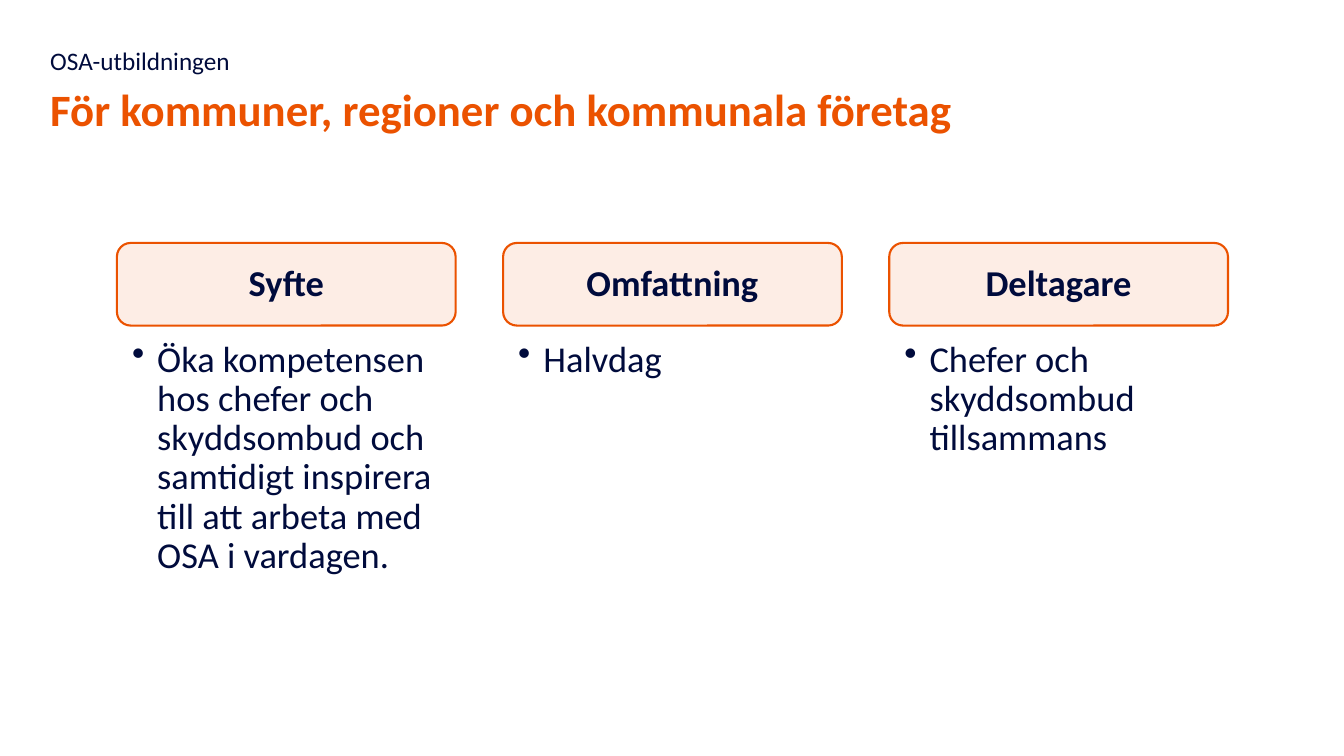
import pptx
import pptx.util
import pptx.dml.color
import pptx.enum.shapes
import pptx.enum.text
import pptx.oxml
import pptx.oxml.ns
from dataclasses import dataclass

Inches = pptx.util.Inches
Pt = pptx.util.Pt
Align = pptx.enum.text.PP_ALIGN
Anchor = pptx.enum.text.MSO_ANCHOR


@dataclass(frozen=True)
class Theme:
    face: str = "Calibri"
    ink: str = "000B3C"
    accent: str = "EB5200"
    tint: str = "FDEDE5"
    small: int = 18
    body: int = 26
    large: int = 32


@dataclass(frozen=True)
class Grid:
    left: float = 1.16
    top: float = 2.41
    step: float = 3.83
    width: float = 3.36
    head: float = 0.82
    body: float = 2.81


THEME = Theme()
GRID = Grid()
CARDS = (
    ("Syfte", "Öka kompetensen hos chefer och skyddsombud och samtidigt "
              "inspirera till att arbeta med OSA i vardagen."),
    ("Omfattning", "Halvdag"),
    ("Deltagare", "Chefer och skyddsombud tillsammans"),
)


def color(code):
    return pptx.dml.color.RGBColor.from_string(code)


def apply(item, values):
    for name, value in values.items():
        setattr(item, name, value)


def bullet(para):
    props = para._p.get_or_add_pPr()
    props.set("marL", str(Inches(0.25)))
    props.set("indent", str(Inches(-0.25)))
    mark = pptx.oxml.parse_xml(
        f'<a:buChar {pptx.oxml.ns.nsdecls("a")} char="•"/>')
    props.append(mark)


def write(shape, text, size, tone, bold=False, inset=(0.1, 0.05, 0.1, 0.05),
          anchor=Anchor.TOP, layout=None, listed=False):
    frame = shape.text_frame
    sides = ("margin_left", "margin_top", "margin_right", "margin_bottom")
    apply(frame, {"word_wrap": True, "vertical_anchor": anchor})
    apply(frame, dict(zip(sides, map(Inches, inset))))
    para = frame.paragraphs[0]
    apply(para, layout or {})
    if listed:
        bullet(para)
    run = para.add_run()
    run.text = text
    apply(run.font, {"name": THEME.face, "size": Pt(size), "bold": bold})
    run.font.color.rgb = color(tone)


def label(slide, box, text, size, tone, **style):
    shape = slide.shapes.add_textbox(*map(Inches, box))
    write(shape, text, size, tone, **style)


def header(slide, box, text):
    kind = pptx.enum.shapes.MSO_SHAPE.ROUNDED_RECTANGLE
    shape = slide.shapes.add_shape(kind, *map(Inches, box))
    shape.shadow.inherit = False
    shape.fill.solid()
    shape.fill.fore_color.rgb = color(THEME.tint)
    shape.line.color.rgb = color(THEME.accent)
    shape.line.width = Pt(1.5)
    write(shape, text, THEME.body, THEME.ink, bold=True,
          inset=(0.2, 0.12, 0.2, 0.12), anchor=Anchor.MIDDLE,
          layout={"alignment": Align.CENTER, "line_spacing": 0.9})


def card(slide, col, title, text):
    left = GRID.left + col * GRID.step
    header(slide, (left, GRID.top, GRID.width, GRID.head), title)
    box = (left, GRID.top + GRID.head, GRID.width, GRID.body)
    label(slide, box, text, THEME.body, THEME.ink,
          inset=(0.15, 0.15, 0.2, 0.23), listed=True,
          layout={"alignment": Align.LEFT, "line_spacing": 0.9})


def main():
    deck = pptx.Presentation()
    apply(deck, {"slide_width": Inches(13.33), "slide_height": Inches(7.5)})
    slide = deck.slides.add_slide(deck.slide_layouts[6])
    label(slide, (0.4, 0.76, 12.56, 0.79),
          "För kommuner, regioner och kommunala företag",
          THEME.large, THEME.accent, bold=True)
    label(slide, (0.4, 0.4, 12.56, 0.36), "OSA-utbildningen",
          THEME.small, THEME.ink)
    for col, (title, text) in enumerate(CARDS):
        card(slide, col, title, text)
    deck.save("out.pptx")


if __name__ == "__main__":
    main()
